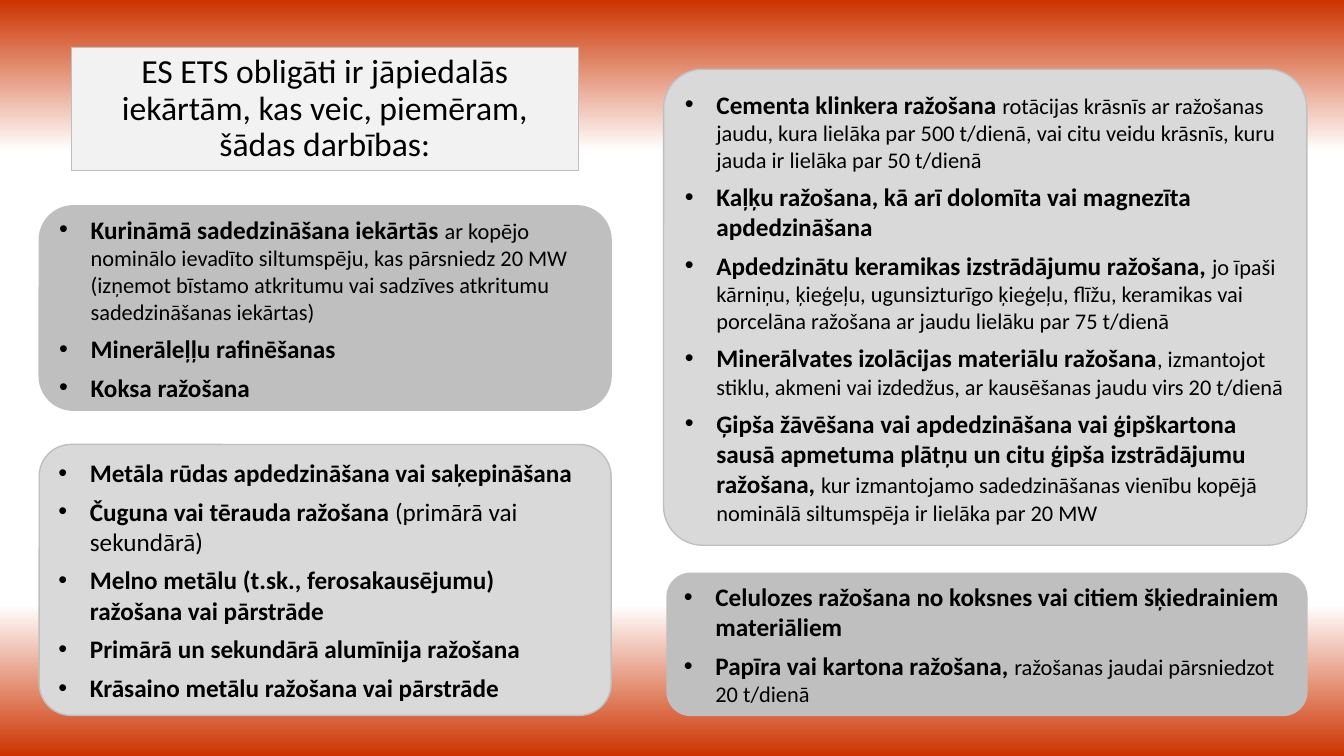
from copy import deepcopy
from dataclasses import dataclass

from lxml import etree
from pptx import Presentation
from pptx.dml.color import RGBColor
from pptx.enum.shapes import MSO_SHAPE
from pptx.enum.text import MSO_ANCHOR, MSO_AUTO_SIZE, PP_ALIGN
from pptx.oxml.ns import qn
from pptx.util import Pt

ROUNDED = MSO_SHAPE.ROUNDED_RECTANGLE
MIDDLE = MSO_ANCHOR.MIDDLE
NO_AUTOFIT = MSO_AUTO_SIZE.NONE
CENTER = PP_ALIGN.CENTER
LEFT = PP_ALIGN.LEFT
TITLE_ONLY = 5


@dataclass(frozen=True)
class Theme:
    """Colours, font and type sizes of the slide."""
    font: str = "Calibri"
    ink: str = "000000"
    accent: str = "CC3300"
    paper: str = "FFFFFF"
    title_fill: str = "F2F2F2"
    light: str = "D9D9D9"
    dark: str = "BFBFBF"
    title_size: int = 24
    activity_size: int = 18
    detail_size: int = 16


THEME = Theme()
TITLE = "ES ETS obligāti ir jāpiedalās iekārtām, kas veic, piemēram, šādas darbības:"
FUELS = [
    ("Kurināmā sadedzināšana iekārtās ",
     "ar kopējo nominālo ievadīto siltumspēju, kas pārsniedz 20 MW (izņemot bīstamo "
     "atkritumu vai sadzīves atkritumu sadedzināšanas iekārtas)"),
    ("Minerāleļļu rafinēšanas", ""),
    ("Koksa ražošana", ""),
]
MINERALS = [
    ("Cementa klinkera ražošana ",
     "rotācijas krāsnīs ar ražošanas jaudu, kura lielāka par 500 t/dienā, vai citu "
     "veidu krāsnīs, kuru jauda ir lielāka par 50 t/dienā"),
    ("Kaļķu ražošana, kā arī dolomīta vai magnezīta apdedzināšana", ""),
    ("Apdedzinātu keramikas izstrādājumu ražošana, ",
     "jo īpaši kārniņu, ķieģeļu, ugunsizturīgo ķieģeļu, flīžu, keramikas vai "
     "porcelāna ražošana ar jaudu lielāku par 75 t/dienā"),
    ("Minerālvates izolācijas materiālu ražošana",
     ", izmantojot stiklu, akmeni vai izdedžus, ar kausēšanas jaudu virs 20 t/dienā"),
    ("Ģipša žāvēšana vai apdedzināšana vai ģipškartona sausā apmetuma plātņu un citu "
     "ģipša izstrādājumu ražošana, ",
     "kur izmantojamo sadedzināšanas vienību kopējā nominālā siltumspēja ir lielāka "
     "par 20 MW"),
]
METALS = [
    ("Metāla rūdas apdedzināšana vai saķepināšana", ""),
    ("Čuguna vai tērauda ražošana ", "(primārā vai sekundārā)"),
    ("Melno metālu (t.sk., ferosakausējumu) ražošana vai pārstrāde", ""),
    ("Primārā un sekundārā alumīnija ražošana", ""),
    ("Krāsaino metālu ražošana vai pārstrāde", ""),
]
PAPER = [
    ("Celulozes ražošana no koksnes vai citiem šķiedrainiem materiāliem", ""),
    ("Papīra vai kartona ražošana, ", "ražošanas jaudai pārsniedzot 20 t/dienā"),
]


def rgb(code):
    """Turn a hex code into a colour."""
    return RGBColor.from_string(code)


def add_text(paragraph, text, size, bold=False):
    """Add a formatted run to a paragraph."""
    run = paragraph.add_run()
    run.text = text
    run.font.name = THEME.font
    run.font.size = Pt(size)
    run.font.bold = bold
    run.font.color.rgb = rgb(THEME.ink)


def style_box(box, fill, line_width):
    """Give a box its fill, outline and text frame settings."""
    box.fill.solid()
    box.fill.fore_color.rgb = rgb(fill)
    box.line.color.rgb = rgb(THEME.dark)
    box.line.width = Pt(line_width)
    frame = box.text_frame
    frame.word_wrap = True
    frame.auto_size = NO_AUTOFIT
    frame.vertical_anchor = MIDDLE
    return frame


def paint_background(slide):
    """Fade the accent colour in from the top and bottom edges."""
    fill = slide.background.fill
    fill.gradient()
    fill.gradient_angle = 270
    stop_list = slide.element.find(".//" + qn("a:gsLst"))
    stop_list.extend([deepcopy(stop) for stop in stop_list[:2]])
    bands = [(0, THEME.accent), (0.2, THEME.paper), (0.8, THEME.paper), (1, THEME.accent)]
    for stop, (position, color) in zip(fill.gradient_stops, bands):
        stop.position = position
        stop.color.rgb = rgb(color)


def place_title(slide):
    """Move the title placeholder and make it a rounded box."""
    title = slide.shapes.title
    title.left, title.top, title.width, title.height = Pt(51), Pt(34), Pt(362), Pt(88)
    outline = etree.Element(qn("a:prstGeom"), prst="roundRect")
    guides = etree.SubElement(outline, qn("a:avLst"))
    etree.SubElement(guides, qn("a:gd"), name="adj", fmla="val 18400")
    title.element.spPr.insert(1, outline)
    heading = style_box(title, THEME.title_fill, 0.75).paragraphs[0]
    heading.alignment = CENTER
    heading.line_spacing = 0.9
    heading.space_before = Pt(0)
    add_text(heading, TITLE, THEME.title_size)


def format_bullet(paragraph):
    """Make a paragraph a bulleted item with a hanging indent."""
    paragraph.alignment = LEFT
    paragraph.space_after = Pt(6)
    properties = paragraph._p.get_or_add_pPr()
    properties.set("marL", str(Pt(22.5)))
    properties.set("indent", str(-Pt(22.5)))
    etree.SubElement(properties, qn("a:buFont"), typeface="Arial")
    etree.SubElement(properties, qn("a:buChar"), char="•")


def add_panel(slide, left, top, width, height, fill, activities,
              rounding=0.1667, detail_size=THEME.detail_size):
    """Add a rounded panel listing activities with their details."""
    panel = slide.shapes.add_shape(ROUNDED, Pt(left), Pt(top), Pt(width), Pt(height))
    panel.shadow.inherit = False
    panel.adjustments[0] = rounding
    frame = style_box(panel, fill, 1)
    for index, (activity, detail) in enumerate(activities):
        item = frame.add_paragraph() if index else frame.paragraphs[0]
        format_bullet(item)
        add_text(item, activity, THEME.activity_size, bold=True)
        if detail:
            add_text(item, detail, detail_size)


def main():
    """Build the slide and save it."""
    deck = Presentation()
    deck.slide_width, deck.slide_height = Pt(960), Pt(540)
    slide = deck.slides.add_slide(deck.slide_layouts[TITLE_ONLY])
    paint_background(slide)
    place_title(slide)
    add_panel(slide, 28, 147, 408.5, 146, THEME.dark, FUELS)
    add_panel(slide, 474, 49.5, 459.5, 340, THEME.light, MINERALS, rounding=0.082)
    add_panel(slide, 28, 317.5, 408.5, 193.5, THEME.light, METALS, rounding=0.117,
              detail_size=THEME.activity_size)
    add_panel(slide, 476.5, 409.5, 457, 101.5, THEME.dark, PAPER)
    deck.save("out.pptx")


if __name__ == "__main__":
    main()
